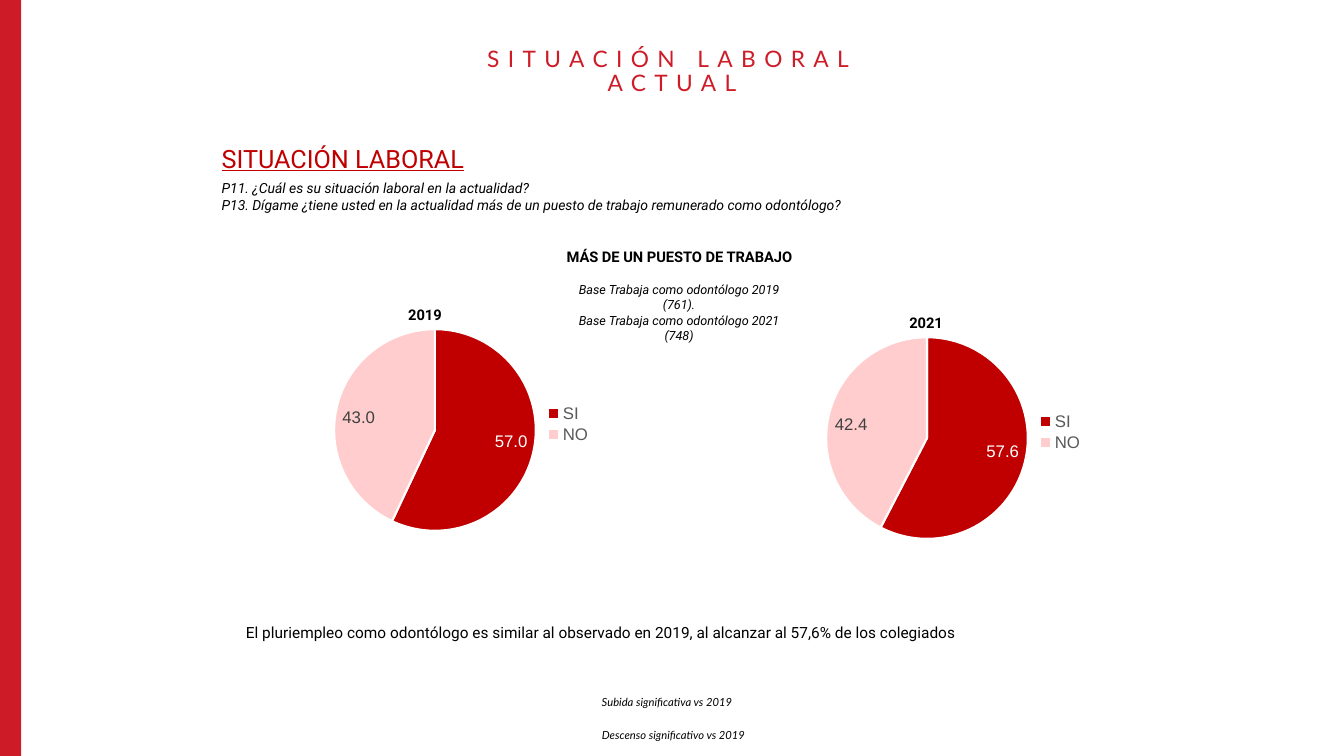
import pptx
import pptx.chart.data
import pptx.dml.color
import pptx.enum.chart
import pptx.enum.text
import pptx.oxml
import pptx.util
from pptx.util import Inches

ALIGN = pptx.enum.text.PP_ALIGN


def rgb(value):
    return pptx.dml.color.RGBColor.from_string(value)


def add_text(x, y, w, h, text, size, font="Roboto", color="000000", align=ALIGN.LEFT,
             bold=False, italic=False):
    """Add a text box with one format; a line feed starts a paragraph, \\v a line."""
    tf = s.shapes.add_textbox(Inches(x), Inches(y), Inches(w), Inches(h)).text_frame
    tf.word_wrap = True
    tf.text = text
    for p in tf.paragraphs:
        p.alignment = align
        for r in p.runs:
            r.font.name = font
            r.font.size = pptx.util.Pt(size)
            r.font.bold = bold
            r.font.italic = italic
            r.font.color.rgb = rgb(color)
    return tf


prs = pptx.Presentation()
prs.slide_width, prs.slide_height = Inches(13.33), Inches(7.5)
s = prs.slides.add_slide(prs.slide_layouts[6])

bar = s.shapes.add_shape(pptx.enum.shapes.MSO_SHAPE.RECTANGLE, 0, 0, Inches(0.21), Inches(7.5))
bar.shadow.inherit = False
bar.fill.solid()
bar.fill.fore_color.rgb = rgb("CD1C28")
bar.line.fill.background()

# Headings and questions
title = add_text(4.55, 0.53, 4.23, 0.37, "SITUACIÓN LABORAL ACTUAL", 16.2, "Lato", "CD1C28",
                 ALIGN.CENTER)
title.vertical_anchor = pptx.enum.text.MSO_ANCHOR.MIDDLE
title.paragraphs[0].line_spacing = 0.9
title.paragraphs[0].runs[0].font._element.set("spc", "600")

heading = add_text(2.1, 1.37, 8.44, 0.4, "SITUACIÓN LABORAL", 18, color="C00000")
heading.paragraphs[0].runs[0].font.underline = True

add_text(2.1, 1.73, 9.28, 0.44,
         "P11. ¿Cuál es su situación laboral en la actualidad? \v"
         "P13. Dígame ¿tiene usted en la actualidad más de un puesto de trabajo remunerado "
         "como odontólogo?", 10, italic=True)
add_text(2.34, 6.13, 8.65, 0.29,
         "El pluriempleo como odontólogo es similar al observado en 2019, al alcanzar al 57,6% "
         "de los colegiados", 11, align=ALIGN.JUSTIFY)
add_text(5.25, 2.41, 2.98, 0.28, "MÁS DE UN PUESTO DE TRABAJO", 10.5, align=ALIGN.CENTER,
         bold=True)
add_text(5.51, 2.75, 2.45, 0.71,
         "Base Trabaja como odontólogo 2019 (761).\nBase Trabaja como odontólogo 2021\n(748)",
         9, align=ALIGN.CENTER, italic=True)

# One pie per year
LAYOUT = ('<c:layout xmlns:c="http://schemas.openxmlformats.org/drawingml/2006/chart">'
          '<c:manualLayout>{}<c:xMode val="edge"/><c:yMode val="edge"/><c:x val="{}"/>'
          '<c:y val="{}"/><c:w val="{}"/><c:h val="{}"/></c:manualLayout></c:layout>')
PLOT_LAYOUT = LAYOUT.format('<c:layoutTarget val="inner"/>', 0.24, 0.055, 0.525, 0.765)
LEGEND_LAYOUT = LAYOUT.format("", 0.77, 0.33, 0.16, 0.17)

pies = [("2021", 7.28, 3.2, 8.15, 3.06, (57.6, 42.4)),
        ("2019", 2.4, 3.12, 3.18, 2.98, (57.0, 43.0))]
for year, x, y, label_x, label_y, values in pies:
    data = pptx.chart.data.CategoryChartData(number_format="0.0")
    data.categories = ["SI", "NO"]
    data.add_series("Series 1", values)
    chart = s.shapes.add_chart(pptx.enum.chart.XL_CHART_TYPE.PIE, Inches(x), Inches(y),
                               Inches(3.81), Inches(2.62), data).chart
    chart.has_title = False
    chart.font.name = "Calibri"
    chart.font.size = pptx.util.Pt(10)
    chart.font.color.rgb = rgb("000000")

    chart.has_legend = True
    legend = chart.legend
    legend.position = pptx.enum.chart.XL_LEGEND_POSITION.BOTTOM
    legend.include_in_layout = False
    legend.font.name = "Arial"
    legend.font.size = pptx.util.Pt(12)
    legend.font.color.rgb = rgb("595959")

    plot = chart.plots[0]
    plot.vary_by_categories = True
    series = plot.series[0]
    labels = series.data_labels
    labels.show_value = True
    labels.number_format = "#,##0.0"
    labels.number_format_is_linked = False
    labels.position = pptx.enum.chart.XL_LABEL_POSITION.INSIDE_END
    labels.font.name = "Arial"
    labels.font.size = pptx.util.Pt(12)
    labels.font.color.rgb = rgb("404040")

    for i, color in enumerate(["C00000", "FFCDCD"]):
        point = series.points[i]
        point.format.fill.solid()
        point.format.fill.fore_color.rgb = rgb(color)
        point.format.line.color.rgb = rgb("FFFFFF")
        point.format.line.width = pptx.util.Pt(1.5)

    yes_label = series.points[0].data_label
    yes_label.font.name = "Arial"
    yes_label.font.size = pptx.util.Pt(12)
    yes_label.font.color.rgb = rgb("FFFFFF")
    yes_label.position = pptx.enum.chart.XL_LABEL_POSITION.INSIDE_END

    plot_area = chart._chartSpace.chart.plotArea
    for layout in plot_area.findall(pptx.oxml.ns.qn("c:layout")):
        plot_area.remove(layout)
    plot_area.insert(0, pptx.oxml.parse_xml(PLOT_LAYOUT))
    legend_xml = legend._element
    for layout in legend_xml.findall(pptx.oxml.ns.qn("c:layout")):
        legend_xml.remove(layout)
    legend_xml.insert(1, pptx.oxml.parse_xml(LEGEND_LAYOUT))

    add_text(label_x, label_y, 2.07, 0.28, year, 10.5, align=ALIGN.CENTER, bold=True)

# Key to the changes
for y, w, text in [(6.85, 1.83, "Subida significativa vs 2019"),
                   (7.18, 1.98, "Descenso significativo vs 2019")]:
    add_text(5.87, y, w, 0.24, text, 8, "Lato", align=ALIGN.JUSTIFY, italic=True)

prs.save("out.pptx")
